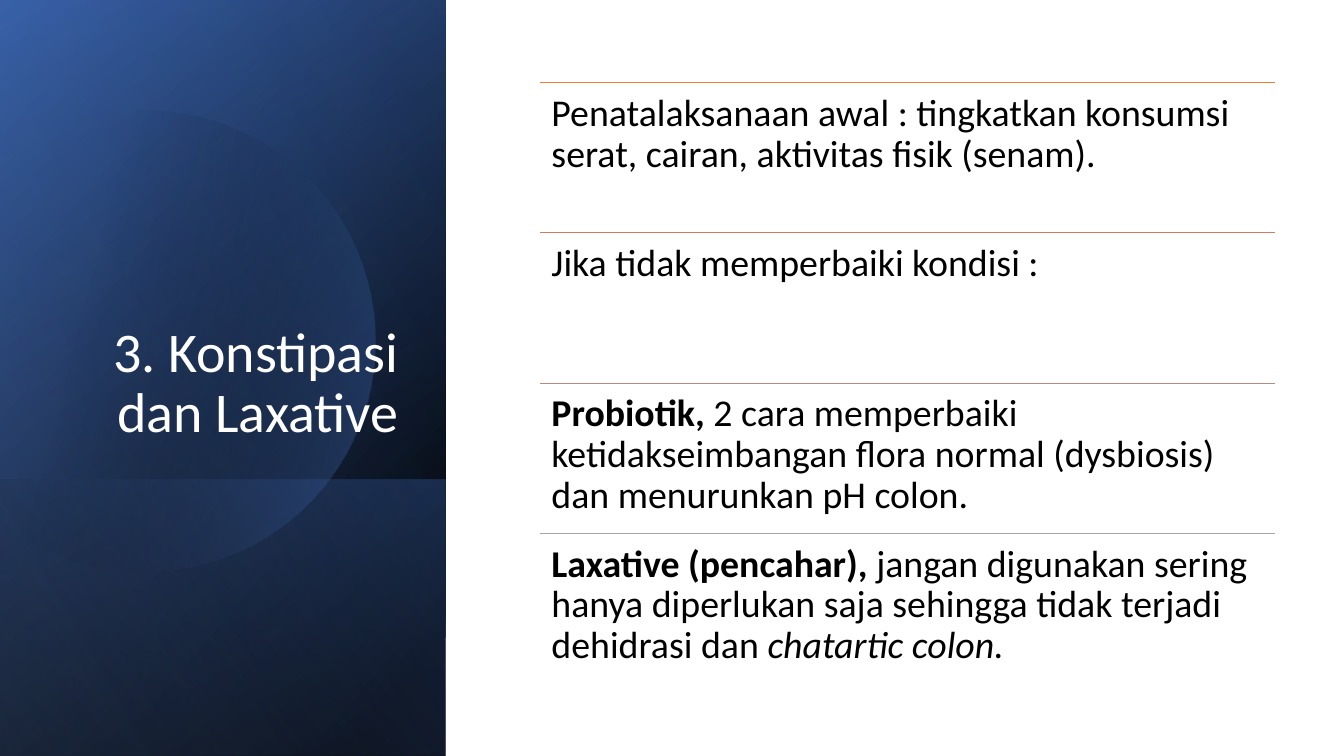
import pptx
import pptx.util
import pptx.dml.color
import pptx.enum.shapes
import pptx.enum.text
import pptx.oxml
import pptx.oxml.ns
import lxml.etree
from dataclasses import dataclass

Inches = pptx.util.Inches
ALIGN = pptx.enum.text.PP_ALIGN
ANCHOR = pptx.enum.text.MSO_ANCHOR


@dataclass(frozen=True)
class Theme:
    font: str = "Calibri"
    title_size: int = 40
    body_size: int = 27
    black: str = "000000"
    white: str = "FFFFFF"
    navy: str = "2F5597"
    blue: str = "4472C4"
    pale_blue: str = "8FAADC"
    rules: tuple = ("ED7D31", "D17B5C", "B98A82", "A5A5A5")


class SlideBuilder:
    def __init__(self, prs, theme):
        self.theme = theme
        self.slide = prs.slides.add_slide(prs.slide_layouts[6])
        self.shapes = self.slide.shapes

    def gradient(self, sp, stops, angle):
        """Fill with (position %, colour, opacity %) stops, clockwise angle."""
        sp.shadow.inherit = False
        sp.line.fill.background()
        sp.fill.background()
        gs = "".join(
            f'<a:gs pos="{pos * 1000}"><a:srgbClr val="{color}">'
            f'<a:alpha val="{opacity * 1000}"/></a:srgbClr></a:gs>'
            for pos, color, opacity in stops)
        fill = pptx.oxml.parse_xml(
            f'<a:gradFill {pptx.oxml.ns.nsdecls("a")} rotWithShape="1">'
            f'<a:gsLst>{gs}</a:gsLst>'
            f'<a:lin ang="{angle * 60000}" scaled="0"/></a:gradFill>')
        spPr = sp._element.spPr
        spPr.replace(spPr.find(pptx.oxml.ns.qn("a:noFill")), fill)

    def panel(self, x, y, w, h, stops, angle):
        """Quarter-turned, mirrored rectangle that covers the given box."""
        left, top = x + (w - h) / 2, y + (h - w) / 2
        sp = self.shapes.add_shape(
            pptx.enum.shapes.MSO_SHAPE.RECTANGLE,
            Inches(left), Inches(top), Inches(h), Inches(w))
        sp.rotation = 90
        sp._element.spPr.xfrm.set("flipH", "1")
        self.gradient(sp, stops, angle)

    def curved(self, start, segments, stops, angle, steps=24):
        """Closed outline; a segment is one line end or three Bezier points."""
        points = [start]
        for seg in segments:
            if len(seg) == 1:
                points.append(seg[0])
                continue
            p0, (p1, p2, p3) = points[-1], seg
            for n in range(1, steps + 1):
                t = n / steps
                u = 1 - t
                points.append(tuple(
                    u**3 * a + 3 * u * u * t * b + 3 * u * t * t * c + t**3 * d
                    for a, b, c, d in zip(p0, p1, p2, p3)))
        emu = [(Inches(x), Inches(y)) for x, y in points]
        builder = self.shapes.build_freeform(*emu[0])
        builder.add_line_segments(emu[1:], close=True)
        self.gradient(builder.convert_to_shape(), stops, angle)

    def rule(self, x, y, w, color):
        line = self.shapes.add_connector(
            pptx.enum.shapes.MSO_CONNECTOR.STRAIGHT,
            Inches(x), Inches(y), Inches(x + w), Inches(y))
        line.line.color.rgb = pptx.dml.color.RGBColor.from_string(color)
        line.line.width = pptx.util.Pt(0.5)
        lxml.etree.SubElement(line._element.spPr,
                              pptx.oxml.ns.qn("a:effectLst"))

    def text(self, x, y, w, h, runs, size, color, margins,
             anchor=ANCHOR.TOP, align=ALIGN.LEFT):
        """Text box; each run is (text, extra font values)."""
        tf = self.shapes.add_textbox(
            Inches(x), Inches(y), Inches(w), Inches(h)).text_frame
        mx, my = map(Inches, margins)
        frame = {"word_wrap": True, "vertical_anchor": anchor,
                 "margin_left": mx, "margin_right": mx,
                 "margin_top": my, "margin_bottom": my}
        for name, value in frame.items():
            setattr(tf, name, value)
        p = tf.paragraphs[0]
        p.alignment, p.line_spacing = align, 0.9
        for words, extra in runs:
            r = p.add_run()
            r.text = words
            font = {"name": self.theme.font, "size": pptx.util.Pt(size)}
            for name, value in (font | extra).items():
                setattr(r.font, name, value)
            r.font.color.rgb = pptx.dml.color.RGBColor.from_string(color)


BOLD, ITALIC = {"bold": True}, {"italic": True}
POINTS = [
    [("Penatalaksanaan awal : tingkatkan konsumsi serat, cairan, "
      "aktivitas fisik (senam).", {})],
    [("Jika tidak memperbaiki kondisi :", {})],
    [("Probiotik, ", BOLD),
     ("2 cara memperbaiki ketidakseimbangan flora normal (dysbiosis) "
      "dan menurunkan pH colon.", {})],
    [("Laxative (pencahar), ", BOLD),
     ("jangan digunakan sering hanya diperlukan saja sehingga tidak "
      "terjadi dehidrasi dan ", {}),
     ("chatartic colon.", ITALIC)],
]
DISC_START = (1.49, 1.1)
DISC = [
    [(2.46, 1.12), (3.35, 1.77), (3.63, 2.75)],
    [(3.98, 3.97), (3.28, 5.23), (2.07, 5.58)],
    [(1.31, 5.8), (0.53, 5.61), (-0.03, 5.14)],
    [(-0.15, 5.03)],
    [(-0.15, 1.75)],
    [(0, 1.61)],
    [(0.23, 1.42), (0.5, 1.28), (0.8, 1.19)],
    [(1.03, 1.13), (1.26, 1.1), (1.49, 1.1)],
]


def main():
    prs = pptx.Presentation()
    prs.slide_width, prs.slide_height = Inches(13.33), Inches(7.5)
    th = Theme()
    s = SlideBuilder(prs, th)

    # Layered gradient side panel
    side = (0, 0, 4.42, 7.5)
    s.panel(*side, [(8, th.black, 100), (100, th.navy, 100)], 50)
    s.panel(*side, [(0, th.black, 0), (99, th.blue, 46)], 30)
    s.panel(0, 4.76, 4.42, 2.74,
            [(2, th.blue, 29), (100, th.black, 30)], 130)
    s.curved(DISC_START, DISC, [(29, th.black, 0), (100, th.blue, 43)], 14)
    s.panel(*side, [(0, th.black, 0), (99, th.pale_blue, 11)], 120)

    # Title
    s.text(0.64, 1.84, 3.41, 2.62, [("3. Konstipasi dan Laxative", {})],
           th.title_size, th.white, (0.1, 0.05), ANCHOR.BOTTOM, ALIGN.RIGHT)

    # Ruled list
    left, top, width, pitch = 5.36, 0.82, 7.29, 1.49
    for i, (runs, color) in enumerate(zip(POINTS, th.rules)):
        y = top + i * pitch
        s.rule(left, y, width, color)
        s.text(left, y, width, pitch, runs, th.body_size, th.black,
               (0.11, 0.11))

    prs.save("out.pptx")


if __name__ == "__main__":
    main()
